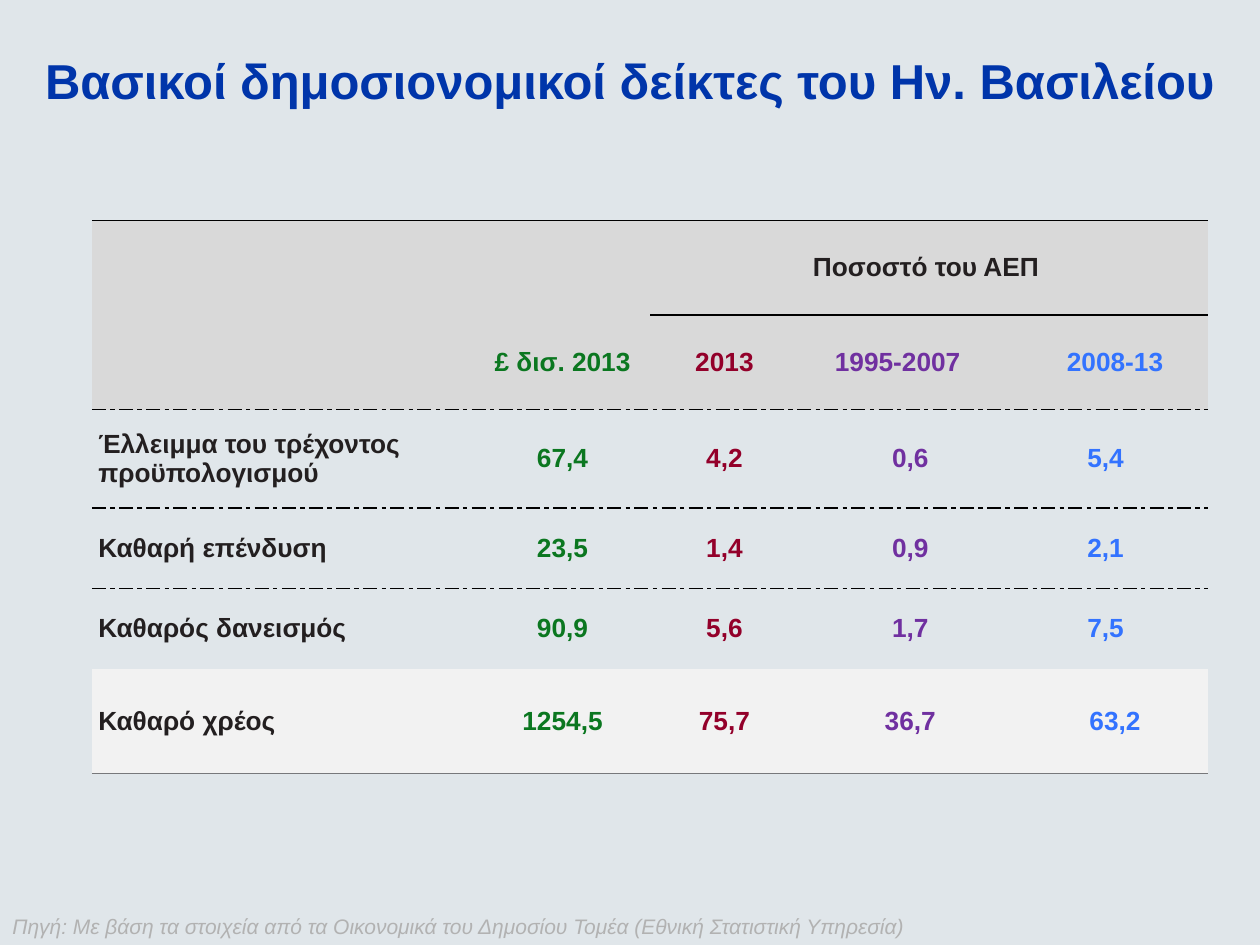
from dataclasses import dataclass
from lxml.etree import SubElement
from pptx import Presentation
from pptx.dml.color import RGBColor
from pptx.enum.text import MSO_ANCHOR, MSO_AUTO_SIZE, PP_ALIGN
from pptx.oxml import parse_xml
from pptx.oxml.ns import nsdecls, qn
from pptx.util import Inches, Pt


@dataclass(frozen=True)
class Theme:
    font: str = "Arial"
    background: str = "E0E6EA"
    title: str = "0035AA"
    source: str = "B2B2B2"
    header_fill: str = "D9D9D9"
    debt_fill: str = "F2F2F2"
    dark: str = "231F20"
    rule: str = "000000"
    bottom_rule: str = "77787B"
    columns: tuple = ("231F20", "0B7720", "93002A", "7030A0", "3373FF")
    title_size: int = 28
    table_size: int = 15
    source_size: int = 12


THEME = Theme()
NO_STYLE = "{2D5ABB26-0587-4C30-8999-92F81FD0307C}"
COL_WIDTHS = (3.04, 1.39, 1.18, 1.77, 1.48)
ROW_HEIGHTS = (0.75, 0.75, 0.78, 0.64, 0.64, 0.83)
ROWS = (
    ("", "", "Ποσοστό του ΑΕΠ", "", ""),
    ("", "£ δισ. 2013", "2013", "1995-2007", "2008-13"),
    ("Έλλειμμα του τρέχοντος προϋπολογισμού", "67,4", "4,2", "0,6", "5,4"),
    ("Καθαρή επένδυση", "23,5", "1,4", "0,9", "2,1"),
    ("Καθαρός δανεισμός", "90,9", "5,6", "1,7", "7,5"),
    ("Καθαρό χρέος", "1254,5", "75,7", "36,7", "63,2"),
)
ROW_FILLS = {0: THEME.header_fill, 1: THEME.header_fill, 5: THEME.debt_fill}
RIGHT_INSETS = {(0, 2): 0.1, (1, 3): 0.25, (2, 4): 0.2, (3, 4): 0.2, (4, 4): 0.2}
SOLID = (THEME.rule, 1, "solid")
DASHED = (THEME.rule, 1, "sysDashDot")
THIN = (THEME.bottom_rule, 0.5, "solid")


def apply(obj, **values):
    for name, value in values.items():
        setattr(obj, name, value)


def write(tf, text, size, color, align=PP_ALIGN.LEFT, **style):
    p = tf.paragraphs[0]
    p.alignment = align
    r = p.add_run()
    r.text = text
    apply(r.font, name=THEME.font, size=Pt(size), **style)
    r.font.color.rgb = RGBColor.from_string(color)
    return r


def add_title(s, text):
    sp = s.shapes.title
    apply(sp, left=0, top=0, width=Inches(10), height=Inches(0.77))
    tf = sp.text_frame
    apply(tf, auto_size=MSO_AUTO_SIZE.NONE, word_wrap=True,
          vertical_anchor=MSO_ANCHOR.TOP,
          margin_top=Inches(0.4), margin_bottom=0)
    r = write(tf, text, THEME.title_size, THEME.title, PP_ALIGN.CENTER, bold=True)
    shadow = parse_xml(
        f'<a:effectLst {nsdecls("a")}><a:outerShdw dist="35921" dir="2700000">'
        '<a:srgbClr val="000000"/></a:outerShdw></a:effectLst>')
    r.font.fill._xPr.find(qn("a:solidFill")).addnext(shadow)


def set_borders(cell, **edges):
    tcPr = cell._tc.get_or_add_tcPr()
    for i, (edge, (color, width, dash)) in enumerate(edges.items()):
        ln = SubElement(tcPr, qn(f"a:ln{edge}"), w=str(Pt(width)))
        fill = SubElement(ln, qn("a:solidFill"))
        SubElement(fill, qn("a:srgbClr"), val=color)
        SubElement(ln, qn("a:prstDash"), val=dash)
        tcPr.insert(i, ln)


def cell_borders(row, col):
    under_span = {"T": SOLID} if col >= 2 else {}
    return {
        0: {"T": SOLID, **({"B": SOLID} if col >= 2 else {})},
        1: {**under_span, "B": DASHED},
        2: {"T": DASHED, "B": DASHED},
        3: {"T": DASHED},
        5: {"B": THIN},
    }.get(row, {})


def format_cell(cell, row, col, text):
    inset = Inches(0.05)
    apply(cell, vertical_anchor=MSO_ANCHOR.MIDDLE, margin_left=inset, margin_top=inset,
          margin_right=Inches(RIGHT_INSETS.get((row, col), 0.05)), margin_bottom=inset)
    if row in ROW_FILLS:
        cell.fill.solid()
        cell.fill.fore_color.rgb = RGBColor.from_string(ROW_FILLS[row])
    else:
        cell.fill.background()
    set_borders(cell, **cell_borders(row, col))
    if text:
        color = THEME.columns[col] if row else THEME.dark
        align = PP_ALIGN.CENTER if col else PP_ALIGN.LEFT
        write(cell.text_frame, text, THEME.table_size, color, align, bold=True)


def add_indicator_table(s):
    frame = s.shapes.add_table(len(ROWS), len(COL_WIDTHS), Inches(0.73), Inches(1.75),
                               Inches(sum(COL_WIDTHS)), Inches(sum(ROW_HEIGHTS)))
    table = frame.table
    apply(table, first_row=False, horz_banding=False)
    table._tbl.tblPr.find(qn("a:tableStyleId")).text = NO_STYLE
    for column, width in zip(table.columns, COL_WIDTHS):
        column.width = Inches(width)
    for row, height in zip(table.rows, ROW_HEIGHTS):
        row.height = Inches(height)
    table.cell(0, 2).merge(table.cell(0, 4))
    for i, texts in enumerate(ROWS):
        for j, text in enumerate(texts):
            format_cell(table.cell(i, j), i, j, text)


def add_source(s, text):
    sp = s.shapes.add_textbox(0, Inches(7.2), Inches(7.47), Inches(0.3))
    sp.text_frame.word_wrap = False
    write(sp.text_frame, text, THEME.source_size, THEME.source, italic=True)


def main():
    prs = Presentation()
    apply(prs, slide_width=Inches(10), slide_height=Inches(7.5))
    s = prs.slides.add_slide(prs.slide_layouts[5])
    s.background.fill.solid()
    s.background.fill.fore_color.rgb = RGBColor.from_string(THEME.background)
    add_title(s, "Βασικοί δημοσιονομικοί δείκτες του Ην. Βασιλείου")
    add_indicator_table(s)
    add_source(s, "Πηγή: Με βάση τα στοιχεία από τα Οικονομικά του Δημοσίου Τομέα "
                  "(Εθνική Στατιστική Υπηρεσία)")
    prs.save("out.pptx")


if __name__ == "__main__":
    main()
